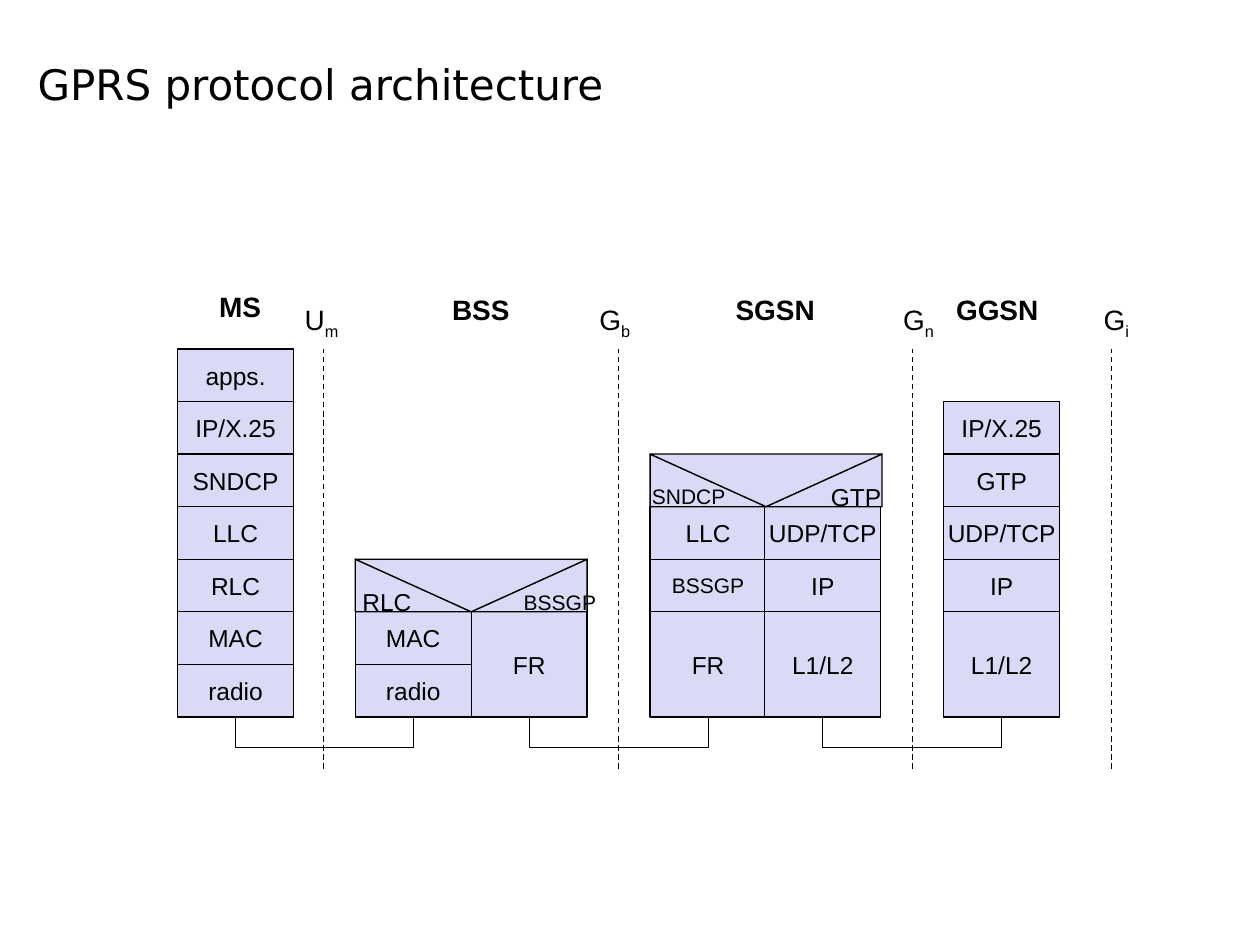
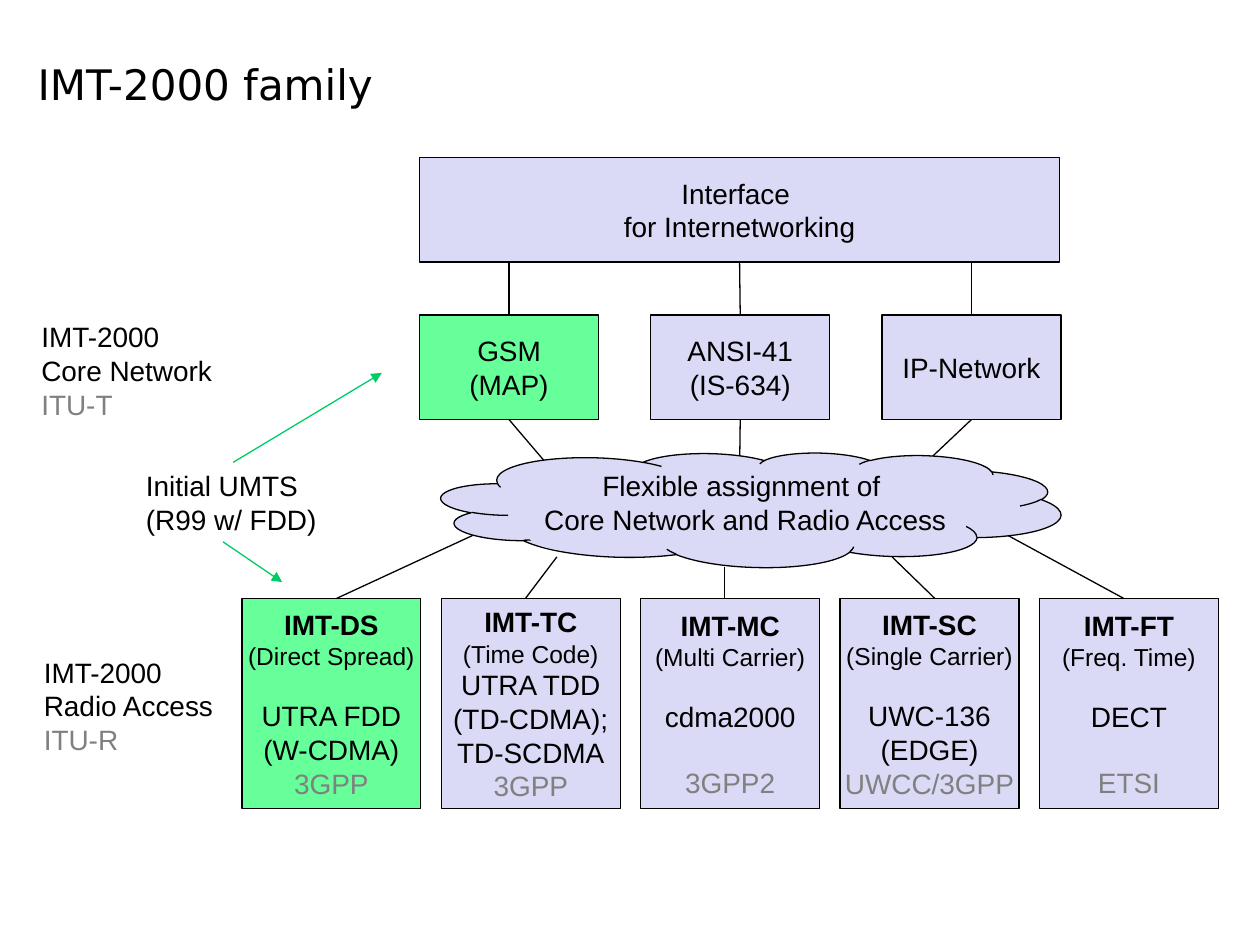
from lxml import etree
from pptx import Presentation
from pptx.dml.color import RGBColor
from pptx.enum import dml, shapes, text
from pptx.oxml import ns
from pptx.util import Inches, Pt

HUES = {"ink": "000000", "lilac": "DADAF6", "mint": "66FF99", "green": "00CC66", "gray": "808080"}
SANS = "Arial"
HEAD = "DejaVu Sans"
KIND = shapes.MSO_SHAPE
JOIN = shapes.MSO_CONNECTOR
MIDDLE = text.PP_ALIGN.CENTER

TOP, FOOT, WIDE = 2.77, 5.69, 0.92
ROW = (FOOT - TOP) / 7
DROP, THIN = 0.25, 0.01


def hue(name):
    return RGBColor.from_string(HUES[name])


def add_run(para, words, size, color="ink", bold=False, font=SANS, base=0):
    run = para.add_run()
    run.text = words
    run.font.size = Pt(size)
    run.font.name = font
    run.font.bold = bold
    run.font.color.rgb = hue(color)
    if base:
        run.font._element.set("baseline", str(base * 1000))


def add_para(frame, first, words, size=16, gap=0, align=None, **look):
    para = frame.paragraphs[0] if first else frame.add_paragraph()
    para.alignment = align
    if gap:
        para.space_before = Pt(gap)
    for index, part in enumerate(words.split("\n")):
        if index:
            para.add_line_break()
        add_run(para, part, size, **look)
    return para


def add_lines(frame, lines, align=None):
    for index, line in enumerate(lines):
        look = line if isinstance(line, dict) else {"words": line}
        add_para(frame, index == 0, align=align, **look)


def add_box(page, at, lines=(), color="lilac", edge="ink", kind=KIND.RECTANGLE, flip=None):
    box = page.add_shape(kind, *map(Inches, at))
    box.shadow.inherit = False
    box.fill.solid()
    box.fill.fore_color.rgb = hue(color)
    box.line.color.rgb = hue(edge)
    box.line.width = Pt(0.75)
    if flip:
        box._element.spPr.xfrm.set(flip, "1")
    if lines:
        frame = box.text_frame
        frame.word_wrap = False
        frame.vertical_anchor = text.MSO_ANCHOR.MIDDLE
        add_lines(frame, lines, MIDDLE)
    return box


def add_note(page, at, lines, align=None, wrap=False):
    note = page.add_textbox(*map(Inches, at))
    frame = note.text_frame
    frame.word_wrap = wrap
    frame.auto_size = text.MSO_AUTO_SIZE.SHAPE_TO_FIT_TEXT
    add_lines(frame, lines, align)
    return frame


def add_link(page, start, end, color="ink", dash=False, arrow=False, kind=JOIN.STRAIGHT):
    link = page.add_connector(kind, *map(Inches, start + end))
    link.line.color.rgb = hue(color)
    link.line.width = Pt(0.75)
    if dash:
        link.line.dash_style = dml.MSO_LINE.DASH
    if arrow:
        etree.SubElement(link.line._get_or_add_ln(), ns.qn("a:tailEnd"), type="triangle")
    etree.SubElement(link._element.spPr, ns.qn("a:effectLst"))
    return link


def add_loop(page, first, last):
    x, end = [(box.left + box.width / 2) / Inches(1) for box in (first, last)]
    link = add_link(page, (x, FOOT), (end, FOOT), kind=JOIN.ELBOW)
    link.begin_connect(first, 2)
    link.end_connect(last, 2)
    span = end - x
    link.left, link.top = Inches((x + end - THIN) / 2), Inches(FOOT - span / 2)
    link.width, link.height = Inches(THIN), Inches(span)
    form = link._element.spPr.xfrm
    form.set("rot", "16200000")
    form.set("flipH", "1")
    guides = link._element.spPr.find(ns.qn("a:prstGeom")).find(ns.qn("a:avLst"))
    etree.SubElement(guides, ns.qn("a:gd"), name="adj1", fmla=f"val {round(DROP / THIN * 100000)}")


def add_stack(page, left, row, cells):
    for words, span in cells:
        size = 12 if words == "BSSGP" else 14
        at = (left, TOP + row * ROW, WIDE, span * ROW)
        box = add_box(page, at, [dict(words=words, size=size)])
        row += span
    return box


def add_relay(page, left, row, west, east):
    y = TOP + row * ROW
    for x, flip, (words, size, near, far) in ((left, None, west), (left + WIDE, "flipH", east)):
        half = add_box(page, (x, y, WIDE, ROW), [dict(words=words, size=size)],
                       kind=KIND.RIGHT_TRIANGLE, flip=flip)
        frame = half.text_frame
        frame.margin_left, frame.margin_right = Inches(near), Inches(far)
        frame.margin_bottom = 0
    add_box(page, (left, y, 2 * WIDE, ROW), kind=KIND.ISOSCELES_TRIANGLE, flip="flipV")


def add_slide(deck, title):
    page = deck.slides.add_slide(deck.slide_layouts[6]).shapes
    frame = page.add_textbox(*map(Inches, (0.2, 0, 6.61, 0.91))).text_frame
    frame.word_wrap = True
    frame.vertical_anchor = text.MSO_ANCHOR.BOTTOM
    add_para(frame, True, title, 24, font=HEAD)
    return page


def draw_gprs(deck):
    page = add_slide(deck, "GPRS protocol architecture")
    stacks = (
        (1.41, 0, [(name, 1) for name in ("apps.", "IP/X.25", "SNDCP", "LLC", "RLC", "MAC", "radio")]),
        (2.82, 5, [("MAC", 1), ("radio", 1)]),
        (3.74, 5, [("FR", 2)]),
        (5.16, 3, [("LLC", 1), ("BSSGP", 1), ("FR", 2)]),
        (6.07, 3, [("UDP/TCP", 1), ("IP", 1), ("L1/L2", 2)]),
        (7.49, 1, [("IP/X.25", 1), ("GTP", 1), ("UDP/TCP", 1), ("IP", 1), ("L1/L2", 2)]),
    )
    feet = [add_stack(page, *stack) for stack in stacks]
    add_relay(page, 2.82, 4, ("RLC", 14, 0.1, 0.21), ("BSSGP", 12, 0.28, 0.1))
    add_relay(page, 5.16, 2, ("SNDCP", 12, 0.1, 0.1), ("GTP", 14, 0.3, 0.1))
    for first, last in zip(feet[::2], feet[1::2]):
        add_loop(page, first, last)

    for x, left, wide, name, sub in ((2.57, 2.32, 0.49, "U", "m"), (4.91, 4.66, 0.46, "G", "b"),
                                     (7.24, 7.07, 0.46, "G", "n"), (8.82, 8.66, 0.41, "G", "i")):
        add_link(page, (x, 6.1), (x, TOP), dash=True)
        frame = add_note(page, (left, 2.35, wide, 0.37), [name])
        add_run(frame.paragraphs[0], sub, 16, base=-25)
    for left, y, wide, name in ((1.64, 2.25, 0.53, "MS"), (3.49, 2.27, 0.66, "BSS"),
                                (5.74, 2.27, 0.83, "SGSN"), (7.49, 2.27, 0.86, "GGSN")):
        add_note(page, (left, y, wide, 0.37), [dict(words=name, bold=True)])


def add_radio(page, index, name, mode, techs, body):
    lines = [dict(words=name, bold=True), dict(words=mode, size=14)]
    lines += [dict(words=tech) for tech in techs]
    lines.append(dict(words=body, color="gray"))
    if len(techs) < 3:
        lines[2]["gap"] = 16.1
    if len(techs) < 2:
        lines[-1]["gap"] = 18.4
    add_box(page, (1.92 + 6.33 * index / 4, 4.75, 1.42, 1.67), lines, "lilac" if index else "mint")


def add_cloud(page):
    group = page.add_group_shape().shapes
    cloud = add_box(group, (3.5, 3.58, 4.92, 0.92), kind=KIND.CLOUD_CALLOUT)
    cloud.adjustments[0], cloud.adjustments[1] = -0.15, 0.16
    cloud.rotation = 1.4
    patch = add_box(group, (4.2, 4.07, 1.32, 0.31), edge="lilac", kind=KIND.OVAL)
    patch.rotation = 357.4
    add_box(group, (7.08, 4, 0.58, 0.25), edge="lilac")
    add_note(group, (4, 3.67, 3.83, 0.64),
             ["Flexible assignment of \nCore Network and Radio Access"], MIDDLE, True)


def draw_family(deck):
    page = add_slide(deck, "IMT-2000 family")
    radios = (
        ("IMT-DS", "(Direct Spread)", ("UTRA FDD", "(W-CDMA)"), "3GPP"),
        ("IMT-TC", "(Time Code)", ("UTRA TDD", "(TD-CDMA);", "TD-SCDMA"), "3GPP"),
        ("IMT-MC", "(Multi Carrier)", ("cdma2000",), "3GPP2"),
        ("IMT-SC", "(Single Carrier)", ("UWC-136", "(EDGE)"), "UWCC/3GPP"),
        ("IMT-FT", "(Freq. Time)", ("DECT",), "ETSI"),
    )
    for index, radio in enumerate(radios):
        add_radio(page, index, *radio)
    for start, end, y in ((2.67, 3.75, 4.25), (4.17, 4.42, 4.42), (5.75, 5.75, 4.5),
                          (7.42, 7.08, 4.42), (8.92, 8, 4.25)):
        add_link(page, (start, 4.75), (end, y))

    hub = add_box(page, (3.33, 1.25, 5.08, 0.83), ["Interface \nfor Internetworking"])
    cores = ((("GSM", "(MAP)"), (4.33, 3.67)), (("ANSI-41", "(IS-634)"), (5.87, 3.74)),
             (("IP-Network",), (7.35, 3.67)))
    for index, (lines, end) in enumerate(cores):
        left = 3.33 + 3.67 * index / 2
        core = add_box(page, (left, 2.5, 1.42, 0.83), lines, "lilac" if index else "mint")
        x = left + 0.71
        above = add_link(page, (x, 2.08), (x, 2.5))
        above.end_connect(core, 0)
        if index == 1:
            above.begin_connect(hub, 2)
        add_link(page, (x, 3.33), end).begin_connect(core, 2)
    add_cloud(page)

    for left, y, part, body in ((0.23, 2.49, "Core Network", "ITU-T"), (0.25, 5.15, "Radio Access", "ITU-R")):
        add_note(page, (left, y, 1.56, 0.9), ["IMT-2000", part, dict(words=body, color="gray")])
    add_note(page, (1.06, 3.67, 1.56, 0.64), ["Initial UMTS", "(R99 w/ FDD)"])
    for start, end in (((1.85, 3.67), (3.03, 2.96)), ((1.77, 4.3), (2.24, 4.62))):
        add_link(page, start, end, "green", arrow=True)


def main():
    deck = Presentation()
    deck.slide_width, deck.slide_height = Inches(10), Inches(7.5)
    draw_gprs(deck)
    draw_family(deck)
    deck.save("out.pptx")


if __name__ == "__main__":
    main()
